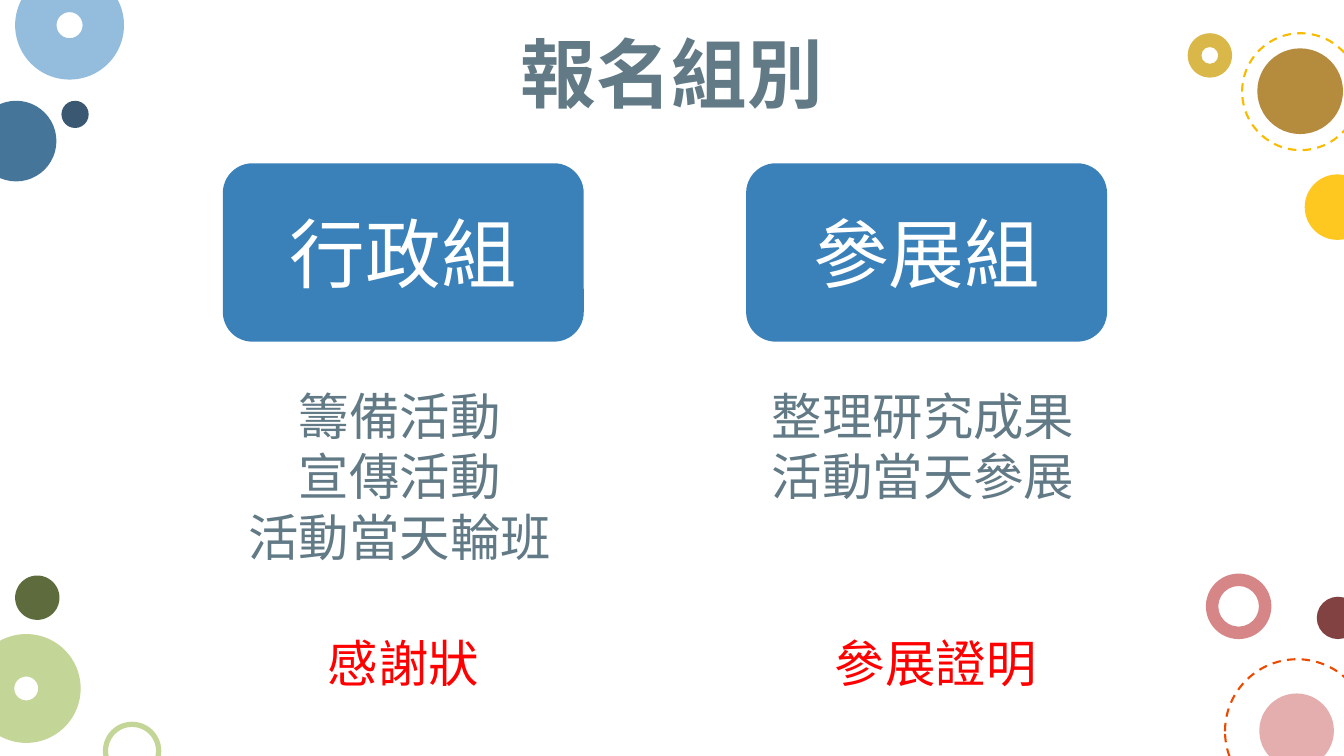
from lxml import etree
from pptx import Presentation
from pptx.dml.color import RGBColor
from pptx.enum.dml import MSO_LINE
from pptx.enum.shapes import MSO_SHAPE as Preset
from pptx.enum.text import MSO_ANCHOR as Anchor, MSO_AUTO_SIZE as AutoSize, PP_ALIGN as Align
from pptx.oxml.ns import qn
from pptx.util import Inches, Pt

FONT = "Noto Sans CJK SC"
SLATE = RGBColor(0x61, 0x7A, 0x86)
BLUE = RGBColor(0x3A, 0x81, 0xBA)
WHITE = RGBColor(0xFF, 0xFF, 0xFF)
RED = RGBColor(0xFF, 0x00, 0x00)
STEEL = RGBColor(0x2B, 0x61, 0x8B)
SKY = RGBColor(0x85, 0xB4, 0xD9)
NAVY = RGBColor(0x1D, 0x40, 0x5D)
ROSE = RGBColor(0xD0, 0x75, 0x76)
MAROON = RGBColor(0x71, 0x26, 0x27)
PINK = RGBColor(0xE0, 0xA3, 0xA3)
LIME = RGBColor(0xBB, 0xD1, 0x89)
OLIVE = RGBColor(0x46, 0x56, 0x21)
MUSTARD = RGBColor(0xD5, 0xAD, 0x2F)
BRONZE = RGBColor(0xAB, 0x7A, 0x22)
YELLOW = RGBColor(0xFF, 0xC0, 0x00)
ORANGE = RGBColor(0xED, 0x4A, 0x00)
AMBER = RGBColor(0xF8, 0xBB, 0x00)


def write_lines(frame, lines, size, color, bold=False):
    frame.text = "\n".join(lines)
    for para in frame.paragraphs:
        para.alignment = Align.CENTER
        font = para.font
        font.name, font.size, font.bold = FONT, Pt(size), bold
        font.color.rgb = color
        # East Asian characters take their typeface from a:ea
        latin = para._p.pPr.find(qn("a:defRPr")).find(qn("a:latin"))
        east_asian = etree.Element(qn("a:ea"), typeface=FONT)
        latin.addnext(east_asian)


def add_label(left, top, width, height, lines, size, color, bold=False):
    box = page.shapes.add_textbox(Inches(left), Inches(top), Inches(width), Inches(height))
    box.text_frame.word_wrap = False
    box.text_frame.auto_size = AutoSize.SHAPE_TO_FIT_TEXT
    write_lines(box.text_frame, lines, size, color, bold)


deck = Presentation()
deck.slide_width, deck.slide_height = Inches(13.33), Inches(7.5)
page = deck.slides.add_slide(deck.slide_layouts[6])

# Corner circles: left, top, diameter, colour, ring thickness (None for a disc)
circles = [
    (-0.24, 1, 0.8, STEEL, None),
    (11.96, 5.69, 0.65, ROSE, 0.19),
    (0.15, -0.29, 1.08, SKY, 0.38),
    (0.61, 1, 0.27, NAVY, None),
    (1.02, 7.16, 0.58, LIME, 0.09),
    (13.06, 5.92, 0.42, MAROON, None),
    (-0.28, 6.29, 1.08, LIME, 0.39),
    (12.49, 6.88, 0.74, PINK, None),
    (11.78, 0.33, 0.44, MUSTARD, 0.31),
    (12.47, 0.48, 0.85, BRONZE, None),
    (12.94, 1.73, 0.65, YELLOW, None),
    (0.15, 5.71, 0.44, OLIVE, None),
]
for left, top, size, color, ring in circles:
    preset = Preset.DONUT if ring else Preset.OVAL
    circle = page.shapes.add_shape(preset, Inches(left), Inches(top), Inches(size), Inches(size))
    if ring:
        circle.adjustments[0] = ring
    circle.shadow.inherit = False
    circle.line.fill.background()
    circle.fill.solid()
    circle.fill.fore_color.rgb = color
    tint = circle.fill._xPr.find(qn("a:solidFill"))[0]
    etree.SubElement(tint, qn("a:alpha"), val="87000")

for left, top, size, color in [(12.15, 6.54, 1.43, ORANGE), (12.32, 0.33, 1.16, AMBER)]:
    orbit = page.shapes.add_shape(Preset.OVAL, Inches(left), Inches(top), Inches(size), Inches(size))
    orbit.shadow.inherit = False
    orbit.fill.background()
    orbit.line.color.rgb = color
    orbit.line.width = Pt(1.5)
    orbit.line.dash_style = MSO_LINE.DASH

add_label(5.05, 0.22, 3.23, 1.01, ["報名組別"], 54, SLATE, bold=True)

for left, group in [(2.21, "行政組"), (7.4, "參展組")]:
    card = page.shapes.add_shape(
        Preset.ROUNDED_RECTANGLE, Inches(left), Inches(1.62), Inches(3.58), Inches(1.77))
    card.shadow.inherit = False
    card.fill.solid()
    card.fill.fore_color.rgb = BLUE
    card.line.fill.background()
    card.text_frame.vertical_anchor = Anchor.MIDDLE
    write_lines(card.text_frame, [group], 54, WHITE)

add_label(2.35, 3.77, 3.23, 1.92, ["籌備活動", "宣傳活動", "活動當天輪班"], 36, SLATE)
add_label(7.54, 3.77, 3.23, 1.31, ["整理研究成果", "活動當天參展"], 36, SLATE)
add_label(3.14, 6.22, 1.72, 0.71, ["感謝狀"], 36, RED)
add_label(8.17, 6.22, 2.22, 0.71, ["參展證明"], 36, RED)

deck.save("out.pptx")
